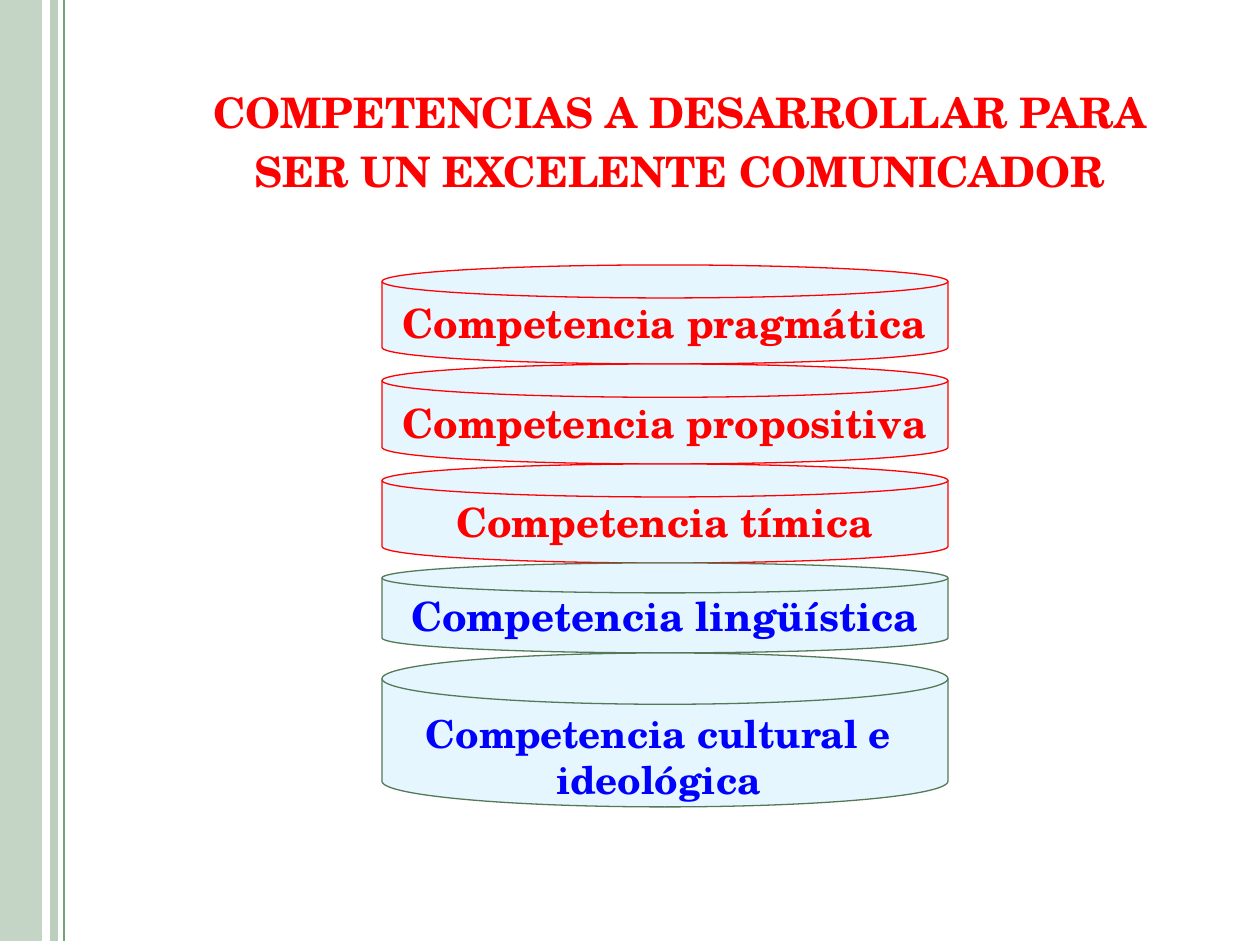
"""Build a slide that stacks the five competences of an excellent communicator."""
import pptx
import pptx.dml.color
import pptx.enum.shapes
import pptx.enum.text
import pptx.oxml
import pptx.oxml.ns
import pptx.util

SCALE = 914400 / 126
SHAPE = pptx.enum.shapes.MSO_SHAPE
ANCHOR = pptx.enum.text.MSO_ANCHOR
FONT = "TeX Gyre Schola"
RED, BLUE, GREEN, SAGE, ICE = "FF0000", "0000FF", "547957", "BCCEBD", "E5F6FF"
DISK_LEFT, DISK_WIDTH, STACK_TOP = 382, 566, 265
DISKS = [
    ("Competencia pragmática", 99, RED, RED),
    ("Competencia propositiva", 100, RED, RED),
    ("Competencia tímica", 99, RED, RED),
    ("Competencia lingüística", 90, BLUE, GREEN),
    ("", 154, BLUE, GREEN),
]


def px(*lengths):
    return [pptx.util.Emu(round(length * SCALE)) for length in lengths]


def paint(colour_format, colour):
    colour_format.rgb = pptx.dml.color.RGBColor.from_string(colour)


def write(shape, text, size, colour, anchor):
    frame = shape.text_frame
    frame.word_wrap = True
    frame.auto_size = pptx.enum.text.MSO_AUTO_SIZE.NONE
    frame.vertical_anchor = anchor
    para = frame.paragraphs[0]
    para.text = text
    para.alignment = pptx.enum.text.PP_ALIGN.CENTER
    para.font.name = FONT
    para.font.size = pptx.util.Pt(size)
    para.font.bold = True
    paint(para.font.color, colour)
    return para


def add_shape(page, kind, place, fill, line=None):
    shape = page.shapes.add_shape(kind, *px(*place))
    shape.shadow.inherit = False
    shape.fill.solid()
    paint(shape.fill.fore_color, fill)
    if line:
        paint(shape.line.color, line)
        shape.line.width = pptx.util.Pt(0.75)
    else:
        shape.line.fill.background()
    return shape


def add_stripe(page, left, colour, width):
    stripe = page.shapes.add_connector(
        pptx.enum.shapes.MSO_CONNECTOR.STRAIGHT, *px(left, -4, left, 941))
    paint(stripe.line.color, colour)
    stripe.line.width = pptx.util.Pt(width)
    stripe._element.spPr.append(pptx.oxml.parse_xml(
        f"<a:effectLst {pptx.oxml.ns.nsdecls('a')}/>"))


def add_side_band(page):
    add_stripe(page, 54, SAGE, 4.5)
    add_stripe(page, 64, "72A376", 1.5)
    band = add_shape(page, SHAPE.RECTANGLE, (0, -4, 42, 945), SAGE)
    colour = band.fill._xPr.find(".//" + pptx.oxml.ns.qn("a:srgbClr"))
    colour.append(pptx.oxml.parse_xml(
        f"<a:alpha {pptx.oxml.ns.nsdecls('a')} val='87000'/>"))


def add_title(page, text):
    title = page.shapes.title
    title.left, title.top, title.width, title.height = px(168, 71, 1023, 127)
    para = write(title, text, 24, RED, ANCHOR.TOP)
    para.line_spacing = pptx.util.Pt(34)


def add_stack(page):
    top = STACK_TOP
    for text, height, colour, line in DISKS:
        place = DISK_LEFT, top, DISK_WIDTH, height
        disk = add_shape(page, SHAPE.FLOWCHART_MAGNETIC_DISK, place, ICE, line)
        if text:
            write(disk, text, 23, colour, ANCHOR.MIDDLE)
        top += height
    box = page.shapes.add_textbox(*px(408, 704, 501, 106))
    write(box, "Competencia cultural e ideológica", 22, BLUE, ANCHOR.TOP)


def main():
    deck = pptx.Presentation()
    deck.slide_width, deck.slide_height = px(1260, 945)
    page = deck.slides.add_slide(deck.slide_layouts.get_by_name("Title Only"))
    add_side_band(page)
    add_title(page, "COMPETENCIAS A DESARROLLAR PARA SER UN EXCELENTE COMUNICADOR")
    add_stack(page)
    deck.save("out.pptx")


if __name__ == "__main__":
    main()
